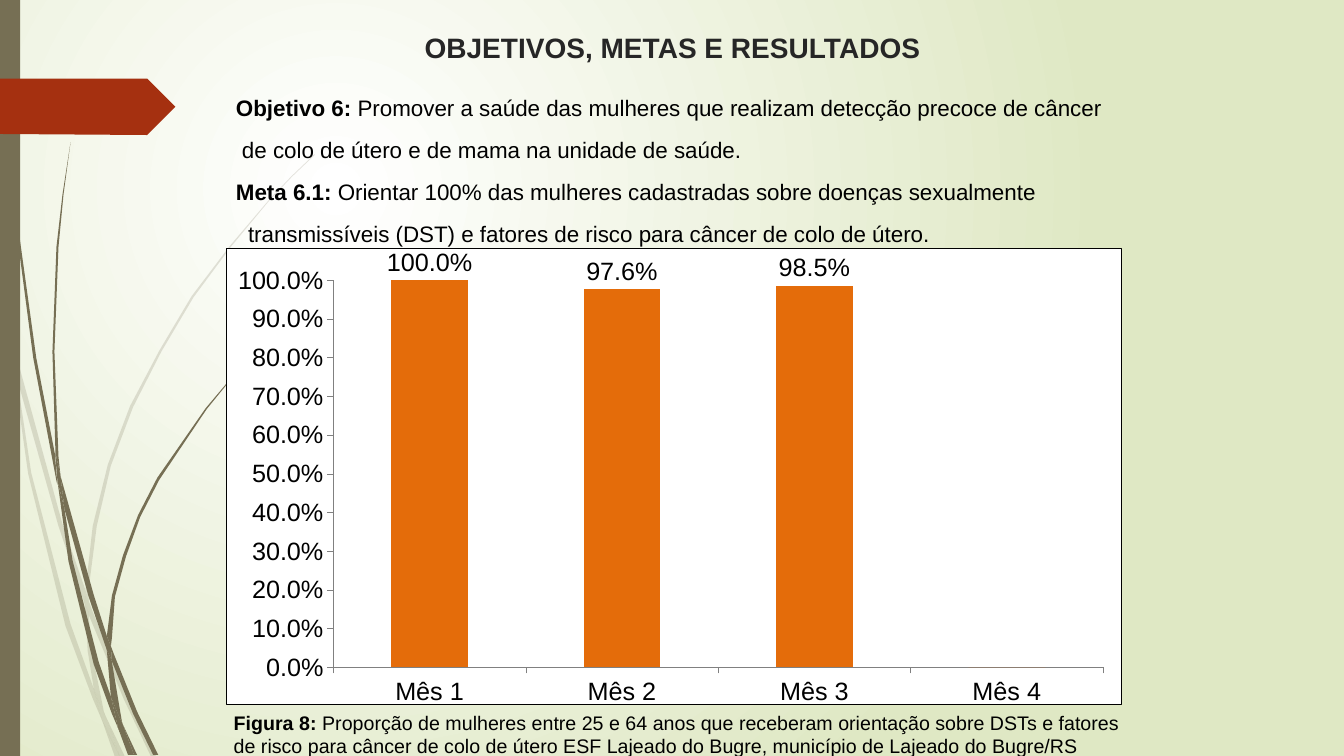
from lxml import etree
from pptx import Presentation
from pptx.chart.data import CategoryChartData
from pptx.dml.color import RGBColor
from pptx.enum.chart import XL_CHART_TYPE as ChartType, XL_LABEL_POSITION as LabelPosition, XL_TICK_MARK as TickMark
from pptx.enum.shapes import MSO_SHAPE as Preset
from pptx.enum.text import MSO_ANCHOR as Anchor, MSO_AUTO_SIZE as AutoSize, PP_ALIGN as Align
from pptx.oxml import parse_xml
from pptx.oxml.ns import nsdecls, qn
from pptx.util import Inches, Pt

BLACK = RGBColor(0x00, 0x00, 0x00)
WHITE = RGBColor(0xFF, 0xFF, 0xFF)
CHARCOAL = RGBColor(0x26, 0x26, 0x26)
OLIVE = RGBColor(0x76, 0x6F, 0x54)
RUST = RGBColor(0xA5, 0x30, 0x10)
ORANGE = RGBColor(0xE4, 0x6C, 0x0A)
GREY = RGBColor(0x80, 0x80, 0x80)
PALE_GREEN = RGBColor(0xDF, 0xE8, 0xC4)

FAINT_WISPS = [
    [(0.11, 3.5), (0.09, 3.22), (0, 2.82), (0, 2.99), (0.1, 3.44)],
    [(0.58, 5.22), (0.84, 5.99), (0.85, 5.86), (0.62, 5.2), (0.14, 3.45), (0.17, 3.76)],
    [(0.92, 6.07), (0.88, 5.96), (0.88, 6.1), (1.23, 6.94), (1.5, 7.51), (1.55, 7.51), (1.27, 6.92)],
    [(1.19, 7.51), (1.24, 7.51), (1.05, 7.11)],
    [(0.93, 6.83), (0.7, 6.19), (0.31, 4.69), (0.17, 3.76), (0.11, 3.5), (0.28, 4.7), (0.65, 6.21),
     (0.92, 6.93), (1.01, 7.14), (0.99, 7.07)],
    [(0.84, 5.99), (0.87, 6.46), (0.93, 6.83), (0.96, 6.92), (1.05, 7.11), (1.03, 7.06), (0.91, 6.46),
     (0.88, 6.1), (0.88, 6.08)],
    [(0.88, 5.84), (0.96, 5.22), (1.1, 4.62), (1.32, 4.04), (1.6, 3.49), (1.92, 2.95), (2.29, 2.45),
     (2.68, 1.98), (2.9, 1.75), (3.12, 1.54), (3.12, 1.53), (2.89, 1.75), (2.68, 1.97), (2.28, 2.44),
     (1.9, 2.94), (1.58, 3.48), (1.29, 4.03), (1.07, 4.61), (0.92, 5.22), (0.85, 5.84), (0.88, 5.96)],
    [(1.01, 7.14), (1.14, 7.51), (1.19, 7.51)],
    [(0.88, 6.08), (0.88, 6.1), (0.88, 5.96), (0.85, 5.86), (0.84, 5.99)],
    [(0.96, 6.92), (0.93, 6.83), (0.99, 7.07), (1.01, 7.14), (1.19, 7.51), (1.05, 7.11)],
]
DARK_WISPS = [
    [(0.07, 1.1), (0.17, 2.33), (0.33, 3.55), (0.56, 4.77), (0.57, 4.81), (0.55, 4.57), (0.55, 4.53),
     (0.36, 3.55), (0.19, 2.32), (0.08, 1.09), (0.05, 0.48), (0.04, 0), (0.03, 0), (0.04, 0.48)],
    [(0.88, 5.92), (1.06, 6.45), (1.06, 6.33), (1.06, 6.31), (0.93, 5.9), (0.6, 4.72), (0.64, 5.05)],
    [(1.13, 6.49), (1.1, 6.41), (1.11, 6.56), (1.32, 7.08), (1.52, 7.49), (1.57, 7.49), (1.36, 7.06)],
    [(1.1, 6.91), (0.98, 6.57), (0.72, 5.56), (0.64, 5.05), (0.57, 4.77), (0.68, 5.57), (0.93, 6.59),
     (1.11, 7.08), (1.17, 7.22), (1.16, 7.17)],
    [(0.6, 4.72), (0.58, 4.53), (0.54, 3.49), (0.58, 2.45), (0.63, 1.93), (0.7, 1.41), (0.62, 1.93),
     (0.56, 2.45), (0.52, 3.49), (0.55, 4.49)],
    [(1.33, 7.49), (1.36, 7.49), (1.22, 7.19)],
    [(0.57, 4.77), (0.64, 5.05), (0.6, 4.72), (0.55, 4.49), (0.55, 4.53)],
    [(1.11, 6.33), (1.14, 5.92), (1.25, 5.52), (1.39, 5.13), (1.58, 4.76), (2.05, 4.06), (2.31, 3.74),
     (2.45, 3.59), (2.61, 3.44), (2.6, 3.44), (2.45, 3.58), (2.31, 3.73), (2.04, 4.05), (1.56, 4.74),
     (1.37, 5.11), (1.22, 5.51), (1.11, 5.91), (1.06, 6.31), (1.1, 6.41)],
    [(1.17, 7.22), (1.27, 7.49), (1.31, 7.49)],
    [(1.06, 6.45), (1.1, 6.91), (1.16, 7.06), (1.22, 7.19), (1.21, 7.16), (1.11, 6.56), (1.09, 6.51)],
    [(1.06, 6.45), (1.09, 6.51), (1.11, 6.56), (1.1, 6.41), (1.06, 6.31), (1.06, 6.33)],
    [(1.16, 7.06), (1.1, 6.91), (1.16, 7.17), (1.17, 7.22), (1.3, 7.49), (1.33, 7.49), (1.22, 7.19)],
]
TAG = [(0, 0.78), (1.46, 0.78), (1.74, 1.06), (1.46, 1.34), (0, 1.33)]
GOALS = [
    (0, [("Objetivo 6:", True), (" Promover a saúde das mulheres que realizam detecção precoce de câncer", False)]),
    (1, [("de colo de útero e de mama na unidade de saúde.", False)]),
    (0, [("Meta 6.1:", True), (" Orientar 100% das mulheres cadastradas sobre doenças sexualmente", False)]),
    (2, [("transmissíveis (DST) e fatores de risco para câncer de colo de útero.", False)]),
]
CAPTION = [
    ("Figura 8:", True),
    (" Proporção de mulheres entre 25 e 64 anos que receberam orientação sobre DSTs e fatores de risco"
     " para câncer de colo de útero ESF Lajeado do Bugre, município de Lajeado do Bugre/RS", False),
]
RESULTS = {"Mês 1": 1, "Mês 2": 0.976, "Mês 3": 0.985, "Mês 4": 0}


class SlideBuilder:
    font = "Arial"

    def __init__(self, slide):
        self.slide = slide

    def background(self, inner, outer):
        self.slide.background.fill.solid()
        solid = self.slide.element.find(".//" + qn("p:bgPr")).find(qn("a:solidFill"))
        solid.getparent().replace(solid, parse_xml(
            f'<a:gradFill {nsdecls("a")} rotWithShape="1"><a:gsLst>'
            f'<a:gs pos="0"><a:srgbClr val="{inner}"/></a:gs><a:gs pos="100000"><a:srgbClr val="{outer}"/></a:gs>'
            '</a:gsLst><a:path path="circle"><a:fillToRect l="50000" t="50000" r="100000" b="100000"/></a:path>'
            '</a:gradFill>'))

    def paint(self, shape, color, opacity=100):
        shape.shadow.inherit = False
        shape.fill.solid()
        shape.fill.fore_color.rgb = color
        shape.line.fill.background()
        if opacity < 100:
            color_element = shape.element.spPr.find(".//" + qn("a:srgbClr"))
            etree.SubElement(color_element, qn("a:alpha"), val=str(opacity * 1000))

    def rectangle(self, box, color):
        self.paint(self.slide.shapes.add_shape(Preset.RECTANGLE, *map(Inches, box)), color)

    def outline(self, shapes, points, color, opacity=100):
        start, *rest = [(Inches(x), Inches(y)) for x, y in points]
        builder = shapes.build_freeform(*start, scale=1.0)
        builder.add_line_segments(rest, close=True)
        self.paint(builder.convert_to_shape(), color, opacity)

    def wisps(self, outlines, color, opacity=100):
        group = self.slide.shapes.add_group_shape()
        for points in outlines:
            self.outline(group.shapes, points, color, opacity)

    def place(self, shape, box):
        shape.left, shape.top, shape.width, shape.height = map(Inches, box)
        self.slide.shapes.element.append(shape.element)

    def runs(self, paragraph, pieces, size, color=BLACK):
        for text, bold in pieces:
            run = paragraph.add_run()
            run.text = text
            run.font.name, run.font.size, run.font.bold = self.font, Pt(size), bold
            run.font.color.rgb = color

    def title(self, text, box):
        shape = self.slide.shapes.title
        self.place(shape, box)
        frame = shape.text_frame
        frame.auto_size, frame.vertical_anchor = AutoSize.NONE, Anchor.MIDDLE
        frame.paragraphs[0].alignment = Align.CENTER
        self.runs(frame.paragraphs[0], [(text, True)], 20, CHARCOAL)

    def body(self, rows, box):
        shape = self.slide.placeholders[1]
        self.place(shape, box)
        frame = shape.text_frame
        frame.auto_size, frame.vertical_anchor = AutoSize.NONE, Anchor.TOP
        for index, (level, pieces) in enumerate(rows):
            paragraph = frame.add_paragraph() if index else frame.paragraphs[0]
            paragraph.line_spacing, paragraph.space_before = 1.5, Pt(1.2)
            properties = paragraph._p.get_or_add_pPr()
            properties.set("marL", "0")
            properties.set("indent", str(Inches(0.59 + 0.06 * level)))
            etree.SubElement(properties, qn("a:buNone"))
            self.runs(paragraph, pieces, 16)

    def text(self, pieces, box, size):
        frame = self.slide.shapes.add_textbox(*map(Inches, box)).text_frame
        frame.word_wrap, frame.auto_size = True, AutoSize.SHAPE_TO_FIT_TEXT
        self.runs(frame.paragraphs[0], pieces, size)

    def column_chart(self, values, box):
        data = CategoryChartData(number_format="0.0%")
        data.categories = list(values)
        data.add_series("Series 1", list(values.values()))
        chart = self.slide.shapes.add_chart(ChartType.COLUMN_CLUSTERED, *map(Inches, box), data).chart
        chart.has_legend = chart.has_title = False
        chart.font.name, chart.font.size, chart.font.color.rgb = self.font, Pt(18), BLACK
        for axis in (chart.category_axis, chart.value_axis):
            axis.has_major_gridlines = False
            axis.major_tick_mark, axis.minor_tick_mark = TickMark.OUTSIDE, TickMark.NONE
            axis.format.line.color.rgb, axis.format.line.width = GREY, Pt(0.25)
        scale = chart.value_axis
        scale.minimum_scale, scale.maximum_scale, scale.major_unit = 0, 1, 0.1
        scale.tick_labels.number_format, scale.tick_labels.number_format_is_linked = "0.0%", False
        plot = chart.plots[0]
        plot.gap_width, plot.vary_by_categories = 150, False
        series = plot.series[0]
        series.format.fill.solid()
        series.format.fill.fore_color.rgb = ORANGE
        labels = series.data_labels
        labels.show_value, labels.position = True, LabelPosition.OUTSIDE_END
        labels.number_format, labels.number_format_is_linked = "0.0%", False
        for index, value in enumerate(values.values()):
            if not value:
                labels._element.insert(0, parse_xml(
                    f'<c:dLbl {nsdecls("c")}><c:idx val="{index}"/><c:delete val="1"/></c:dLbl>'))
        self.chart_frame(chart)

    def chart_frame(self, chart):
        white = f'<c:spPr {nsdecls("c", "a")}><a:solidFill><a:srgbClr val="{WHITE}"/></a:solidFill>'
        border = f'<a:ln w="{Pt(0.25)}"><a:solidFill><a:srgbClr val="{BLACK}"/></a:solidFill></a:ln>'
        area = chart._chartSpace.find(qn("c:chart"))
        area.addnext(parse_xml(white + border + "</c:spPr>"))
        plot_area = area.find(qn("c:plotArea"))
        for layout in plot_area.findall(qn("c:layout")):
            plot_area.remove(layout)
        sizes = "".join(f'<c:{name} val="{value}"/>' for name, value in zip("xywh", (0.12, 0.07, 0.86, 0.85)))
        plot_area.insert(0, parse_xml(
            f'<c:layout {nsdecls("c")}><c:manualLayout><c:layoutTarget val="inner"/>'
            f'<c:xMode val="edge"/><c:yMode val="edge"/>{sizes}</c:manualLayout></c:layout>'))
        plot_area.append(parse_xml(white + "</c:spPr>"))


def main():
    presentation = Presentation()
    presentation.slide_width, presentation.slide_height = Inches(13.33), Inches(7.5)
    builder = SlideBuilder(presentation.slides.add_slide(presentation.slide_layouts[1]))
    builder.background(WHITE, PALE_GREEN)
    builder.wisps(FAINT_WISPS, OLIVE, 20)
    builder.wisps(DARK_WISPS, OLIVE)
    builder.rectangle((0, 0, 0.2, 7.5), OLIVE)
    builder.outline(builder.slide.shapes, TAG, RUST)
    builder.title("OBJETIVOS, METAS E RESULTADOS", (1.42, 0.18, 10.5, 0.57))
    builder.body(GOALS, (1.65, 0.75, 10.52, 2.12))
    builder.column_chart(RESULTS, (2.24, 2.46, 8.88, 4.54))
    builder.text(CAPTION, (2.22, 7, 9.14, 0.57), 14)
    presentation.save("out.pptx")


if __name__ == "__main__":
    main()
